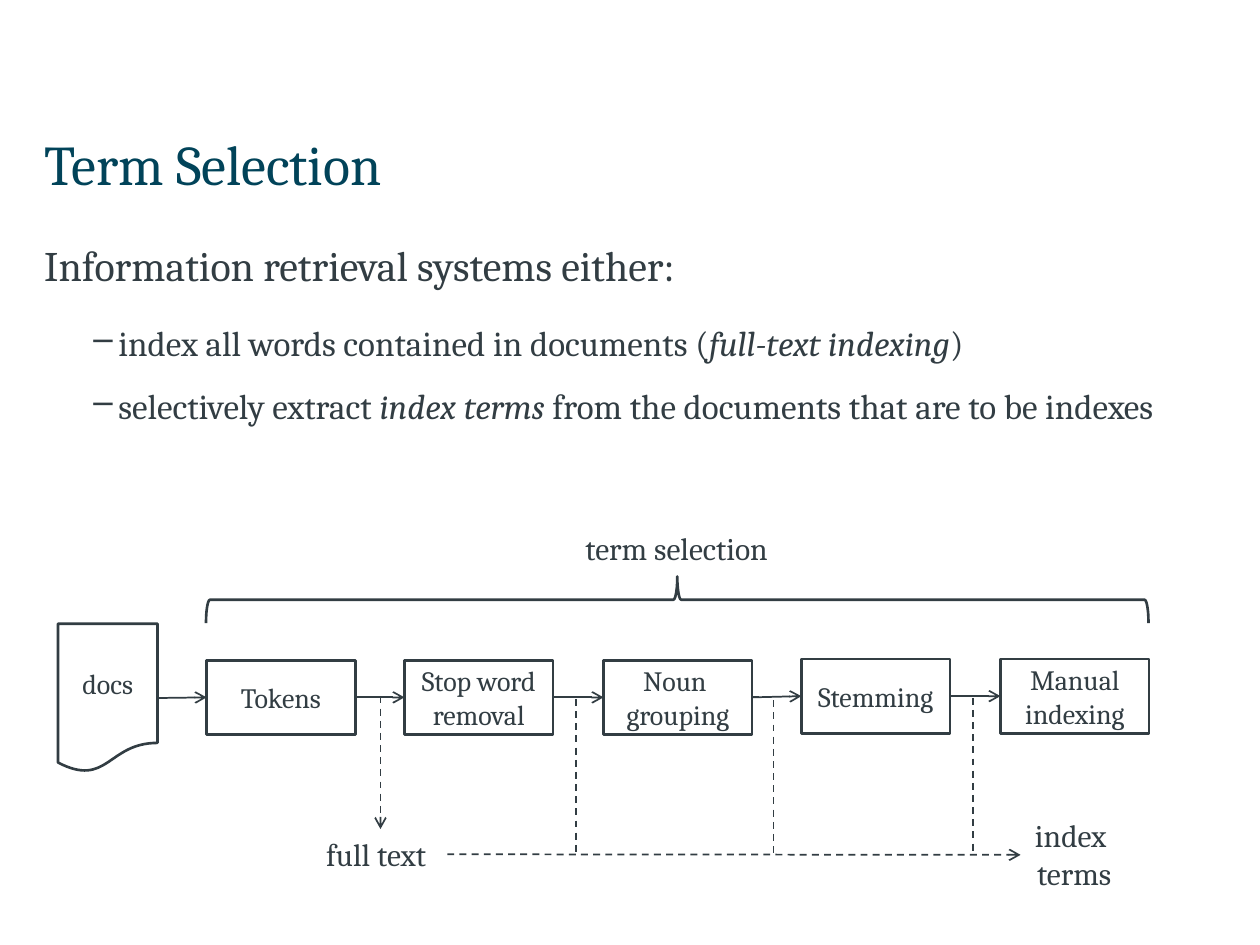
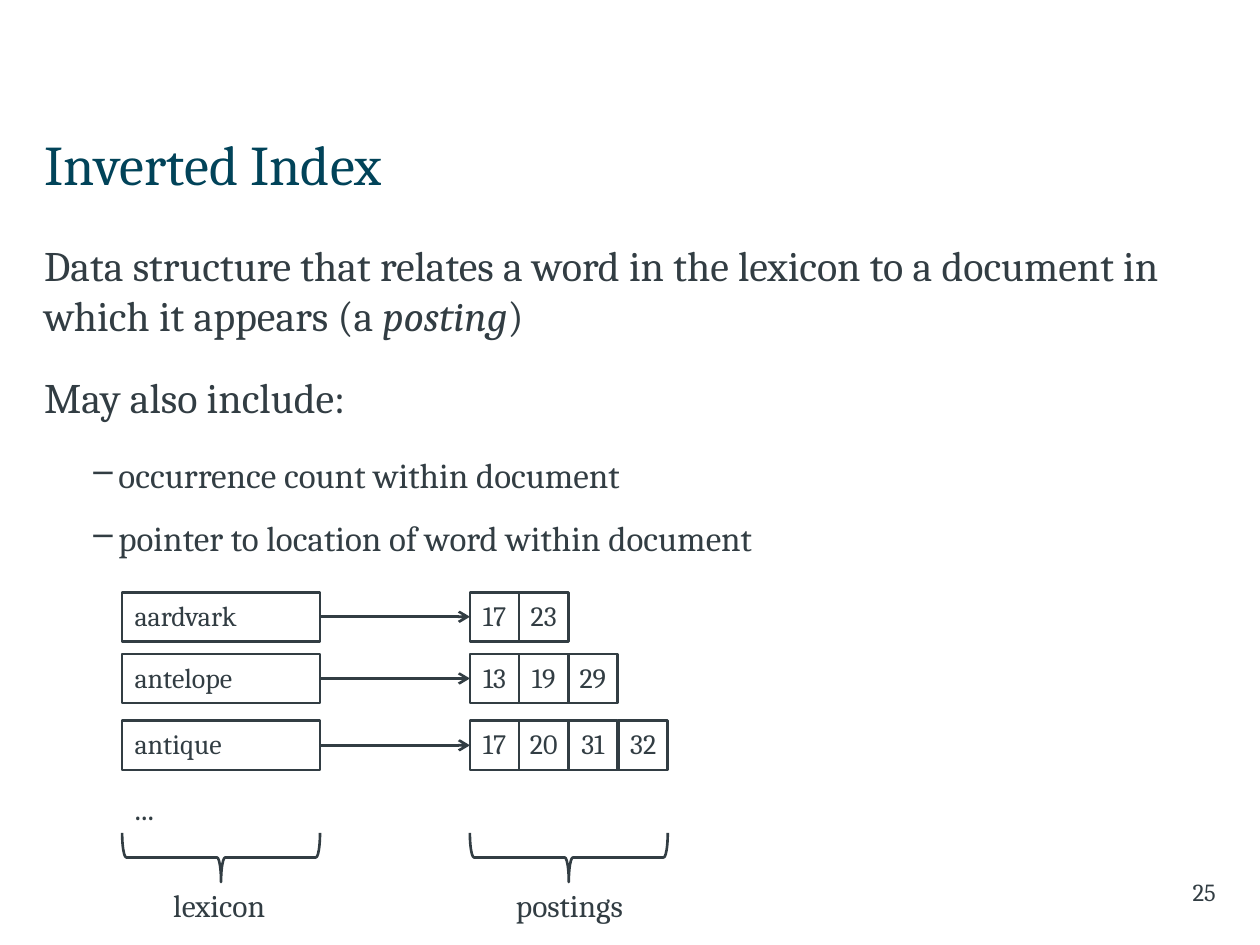
"""Build two slides on term selection and the inverted index."""
import dataclasses

import pptx
import pptx.dml.color
import pptx.enum.dml
import pptx.enum.shapes
import pptx.enum.text
import pptx.oxml
import pptx.oxml.ns
import pptx.util

ALIGN = pptx.enum.text.PP_ALIGN
ANCHOR = pptx.enum.text.MSO_ANCHOR
FIT = pptx.enum.text.MSO_AUTO_SIZE
SHAPE = pptx.enum.shapes.MSO_SHAPE
LINK = pptx.enum.shapes.MSO_CONNECTOR
TOP, LEFT, BOTTOM, RIGHT = range(4)


@dataclasses.dataclass(frozen=True)
class Theme:
    font: str = "Cambria"
    ink: str = "323D43"
    title: str = "014359"
    paper: str = "FFFFFF"
    head: int = 32
    lead: int = 24
    item: int = 20
    label: int = 18
    box: int = 16
    page: int = 14
    thick: float = 1.5
    thin: float = 1


THEME = Theme()
SCALE = 9144
SIZE = (1000, 750)
TITLE = (35, 98, 929, 71)
BODY = (35, 185, 929, 230)
INSET = (0, 5, 10, 5)
ZERO = (0, 0, 0, 0)
PLAIN = (10, 5, 10, 5)
CELL = (10, 5, 10, 0)

SELECT = {
    "title": "Term Selection",
    "body": [
        (0, "Information retrieval systems either:"),
        (1, "index all words contained in documents (*full-text indexing*)"),
        (1, "selectively extract *index terms *from the documents that are to be indexes"),
    ],
    "steps": [
        ("Tokens", 524),
        ("Stop word removal", 524),
        ("Noun \ngrouping", 524),
        ("Stemming", 523),
        ("Manual\nindexing", 523),
    ],
}
INDEX = {
    "title": "Inverted Index",
    "body": [
        (0, "Data structure that relates a word in the lexicon to a document in "
            "which it appears (a *posting*)"),
        (0, "May also include:"),
        (1, "occurrence count within document"),
        (1, "pointer to location of word within document"),
    ],
    "words": [
        ("aardvark", 470, [17, 23]),
        ("antelope", 519, [13, 19, 29]),
        ("antique", 572, [17, 20, 31, 32]),
    ],
    "braces": [
        ((432, 602, 39, 157), "postings", (395, 698, 114, 40)),
        ((156, 602, 39, 157), "lexicon", (124, 698, 100, 40)),
    ],
    "page": "25",
}


def px(*nums):
    return [pptx.util.Emu(num * SCALE) for num in nums]


def tint(code):
    return pptx.dml.color.RGBColor.from_string(code)


def node(tag, **attrs):
    part = pptx.oxml.parse_xml(f"<a:{tag} {pptx.oxml.ns.nsdecls('a')}/>")
    for name, value in attrs.items():
        part.set(name, value)
    return part


def style(para, size, color=THEME.ink, align=ALIGN.LEFT):
    para.alignment = align
    para.font.name = THEME.font
    para.font.size = pptx.util.Pt(size)
    para.font.color.rgb = tint(color)


def frame(shape, inset, wrap=True, anchor=ANCHOR.TOP, fit=FIT.NONE):
    text = shape.text_frame
    text.margin_left, text.margin_top, text.margin_right, text.margin_bottom = px(*inset)
    text.auto_size = fit
    text.word_wrap = wrap
    text.vertical_anchor = anchor
    return text


def write(text, words, size, align=ALIGN.LEFT, color=THEME.ink):
    para = text.paragraphs[0]
    para.text = words
    style(para, size, color, align)


def start(deck, data):
    slide = deck.slides.add_slide(deck.slide_layouts[5])
    title = slide.shapes.title
    title.left, title.top, title.width, title.height = px(*TITLE)
    write(frame(title, INSET), data["title"], THEME.head, color=THEME.title)
    text = frame(slide.shapes.add_textbox(*px(*BODY)), INSET)
    for i, (level, words) in enumerate(data["body"]):
        para = text.add_paragraph() if i else text.paragraphs[0]
        for j, piece in enumerate(words.split("*")):
            run = para.add_run()
            run.text = piece
            if j % 2:
                run.font.italic = True
        para.level = level
        para.space_after = pptx.util.Pt(12 if level else 18)
        style(para, THEME.item if level else THEME.lead)
        if level:
            props = para._p.get_or_add_pPr()
            margin, hang = px(59, -20)
            props.set("marL", str(margin))
            props.set("indent", str(hang))
            mark = props.find(pptx.oxml.ns.qn("a:defRPr"))
            mark.addprevious(node("buChar", char="–"))
    return slide.shapes


def shape(shapes, kind, place):
    item = shapes.add_shape(kind, *px(*place))
    item.shadow.inherit = False
    item.line.color.rgb = tint(THEME.ink)
    item.line.width = pptx.util.Pt(THEME.thick)
    return item


def box(shapes, place, words, kind=SHAPE.RECTANGLE, inset=ZERO, wrap=True,
        anchor=ANCHOR.MIDDLE, align=ALIGN.CENTER):
    item = shape(shapes, kind, place)
    item.fill.solid()
    item.fill.fore_color.rgb = tint(THEME.paper)
    write(frame(item, inset, wrap, anchor), words, THEME.box, align)
    return item


def brace(shapes, place, turn):
    item = shape(shapes, SHAPE.LEFT_BRACE, place)
    item.fill.background()
    item.rotation = turn


def label(shapes, place, words, align=ALIGN.CENTER):
    item = shapes.add_textbox(*px(*place))
    text = frame(item, PLAIN, wrap=False, fit=FIT.SHAPE_TO_FIT_TEXT)
    write(text, words, THEME.label, align)
    return item


def link(shapes, first, last=None, side=LEFT, end=(0, 0), bent=False,
         width=THEME.thin, dash=False, arrow=True):
    kind = LINK.ELBOW if bent else LINK.STRAIGHT
    line = shapes.add_connector(kind, *px(0, 0, *end))
    line.begin_connect(first, RIGHT)
    if last is not None:
        line.end_connect(last, side)
    line.line.color.rgb = tint(THEME.ink)
    line.line.width = pptx.util.Pt(width)
    props = line._element.spPr
    if bent:
        props.find(pptx.oxml.ns.qn("a:prstGeom")).set("prst", "bentConnector2")
    if dash:
        line.line.dash_style = pptx.enum.dml.MSO_LINE.DASH
    if arrow:
        props.find(pptx.oxml.ns.qn("a:ln")).append(node("tailEnd", type="arrow"))
    props.append(node("effectLst"))


def draw_select(deck):
    shapes = start(deck, SELECT)
    steps = [box(shapes, (164 + i * 315 // 2, top, 118, 59), words)
             for i, (words, top) in enumerate(SELECT["steps"])]
    docs = box(shapes, (46, 495, 79, 118), "docs", SHAPE.FLOWCHART_DOCUMENT)
    chain = [docs] + steps
    for first, last in zip(chain, steps):
        link(shapes, first, last)
    full = label(shapes, (249, 658, 106, 40), "full text", ALIGN.LEFT)
    terms = label(shapes, (810, 643, 85, 71), "index \nterms")
    link(shapes, steps[0], full, TOP, bent=True, dash=True)
    for i, step in enumerate(steps[1:-1]):
        end = (457 + i * 315 // 2, 678)
        link(shapes, step, end=end, bent=True, dash=True, arrow=False)
    link(shapes, full, terms, dash=True)
    brace(shapes, (519, 102, 37, 748), 90)
    label(shapes, (448, 415, 178, 40), "term selection")


def draw_index(deck):
    shapes = start(deck, INDEX)
    page = shapes.add_textbox(*px(773, 691, 192, 34))
    write(frame(page, (10, 5, 0, 5)), INDEX["page"], THEME.page, ALIGN.RIGHT)
    look = dict(inset=CELL, wrap=False, anchor=ANCHOR.TOP)
    for word, top, posts in INDEX["words"]:
        entry = box(shapes, (97, top, 157, 39), word, align=ALIGN.LEFT, **look)
        cells = [box(shapes, (373 + i * 118 // 3, top, 39, 39), str(post), **look)
                 for i, post in enumerate(posts)]
        link(shapes, entry, cells[0], width=THEME.thick)
    label(shapes, (97, 621, 41, 40), "...", ALIGN.LEFT)
    for place, words, spot in INDEX["braces"]:
        brace(shapes, place, 270)
        label(shapes, spot, words)


def main():
    deck = pptx.Presentation()
    deck.slide_width, deck.slide_height = px(*SIZE)
    draw_select(deck)
    draw_index(deck)
    deck.save("out.pptx")


if __name__ == "__main__":
    main()
